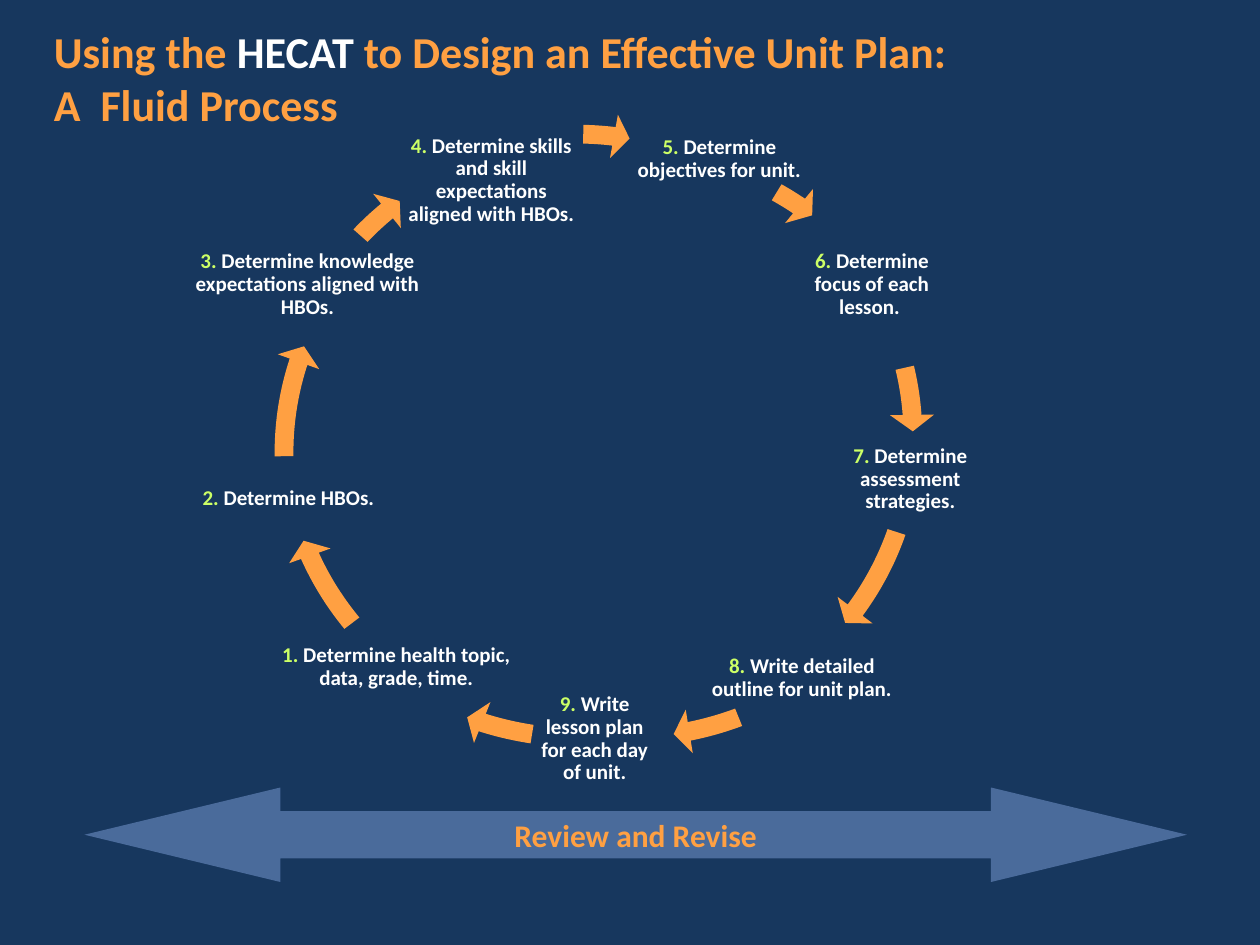
from dataclasses import dataclass

from lxml import etree
from pptx import Presentation
from pptx.dml.color import RGBColor
from pptx.enum.shapes import MSO_SHAPE
from pptx.enum.text import MSO_ANCHOR, PP_ALIGN
from pptx.oxml.ns import qn
from pptx.util import Inches, Pt

CIRCULAR_ARROW = MSO_SHAPE.CIRCULAR_ARROW
LEFT_RIGHT_ARROW = MSO_SHAPE.LEFT_RIGHT_ARROW
MIDDLE, BOTTOM = MSO_ANCHOR.MIDDLE, MSO_ANCHOR.BOTTOM
CENTER = PP_ALIGN.CENTER


@dataclass(frozen=True)
class Theme:
    font: str = "Calibri"
    navy: RGBColor = RGBColor.from_string("17375E")
    orange: RGBColor = RGBColor.from_string("FFA042")
    lime: RGBColor = RGBColor.from_string("CCFF66")
    white: RGBColor = RGBColor.from_string("FFFFFF")
    blue: RGBColor = RGBColor.from_string("98B9F8")
    title: float = 25.2
    banner: float = 18
    step: float = 12


T = Theme()


def write(p, size, *parts):
    for text, color in parts:
        r = p.add_run()
        r.text = text
        r.font.name = T.font
        r.font.size = Pt(size)
        r.font.bold = True
        r.font.color.rgb = color


def add_arrow(shapes, kind, box, color, adjustments):
    sp = shapes.add_shape(kind, *map(Inches, box))
    sp.shadow.inherit = False
    sp.fill.solid()
    sp.fill.fore_color.rgb = color
    sp.line.fill.background()
    for i, value in enumerate(adjustments):
        sp.adjustments[i] = value
    return sp


prs = Presentation()
prs.slide_width, prs.slide_height = Inches(10), Inches(7.5)
s = prs.slides.add_slide(prs.slide_layouts[6])
s.background.fill.solid()
s.background.fill.fore_color.rgb = T.navy

title = s.shapes.add_textbox(Inches(0.33), Inches(0.16), Inches(9.83), Inches(0.92))
tf = title.text_frame
tf.word_wrap = True
tf.vertical_anchor = BOTTOM
p = tf.paragraphs[0]
p.line_spacing = Pt(30)
write(p, T.title, ("Using the ", T.orange), ("HECAT ", T.white),
      ("to Design an Effective Unit Plan: ", T.orange))
p.add_line_break()
write(p, T.title, ("A  Fluid Process", T.orange))

banner = add_arrow(s.shapes, LEFT_RIGHT_ARROW, (0.67, 6.25, 8.75, 0.75), T.blue, (0.5, 2.073))
color = banner.fill._xPr.find(qn("a:solidFill"))[0]
etree.SubElement(color, qn("a:alpha"), val="40000")
tf = banner.text_frame
tf.vertical_anchor = MIDDLE
p = tf.paragraphs[0]
p.alignment = CENTER
write(p, T.banner, ("Review and Revise", T.orange))

# number, wording, text box, arrow left and top, arrow head and tail angles, rotation
steps = [
    (5, "Determine objectives for unit.", (5.01, 0.88, 1.4, 0.77), (2.23, 1.03), (186.52, 183.58), 355.4),
    (6, "Determine focus of each lesson. ", (6.29, 1.87, 1.26, 0.78), (2.08, 0.89), (213.7, 208.47), 0),
    (7, "Determine assessment strategies.", (6.45, 3.42, 1.55, 0.77), (2.08, 0.89), (20.5, 10.72), 0),
    (8, "Write detailed outline for unit plan.", (5.53, 5, 1.67, 0.77), (2.29, 0.89), (46.63, 40.8), 0),
    (9, "Write lesson plan for each day of unit.", (4.24, 5.48, 0.96, 0.77), (1.94, 0.89), (65.39, 59.57), 0),
    (1, "Determine health topic, data, grade, time.", (2.04, 4.91, 2.21, 0.77), (2.08, 0.89), (94.46, 85.67), 0),
    (2, "Determine HBOs.", (1.56, 3.57, 1.46, 0.77), (2.08, 1.02), (118.08, 107.57), 0),
    (3, "Determine knowledge expectations aligned with HBOs.", (1.37, 1.87, 2.14, 0.78),
     (2.03, 0.92), (136.87, 132.83), 0),
    (4, "Determine skills and skill expectations aligned with HBOs.", (3.17, 1.04, 1.46, 0.78),
     (1.9, 0.89), (166.36, 162.85), 0),
]
cycle = s.shapes.add_group_shape()
for number, wording, box, corner, angles, rotation in steps:
    step = cycle.shapes.add_textbox(*map(Inches, box))
    tf = step.text_frame
    tf.word_wrap = True
    tf.vertical_anchor = MIDDLE
    tf.margin_left = tf.margin_right = tf.margin_top = tf.margin_bottom = Inches(0.03)
    p = tf.paragraphs[0]
    p.alignment = CENTER
    p.line_spacing = 0.9
    write(p, T.step, (f"{number}. ", T.lime), (wording, T.white))
    arrow = add_arrow(cycle.shapes, CIRCULAR_ARROW, (*corner, 5.34, 5.14), T.orange,
                      (0.029, 1.8, *angles, 0.034))
    arrow.rotation = rotation

prs.save("out.pptx")
